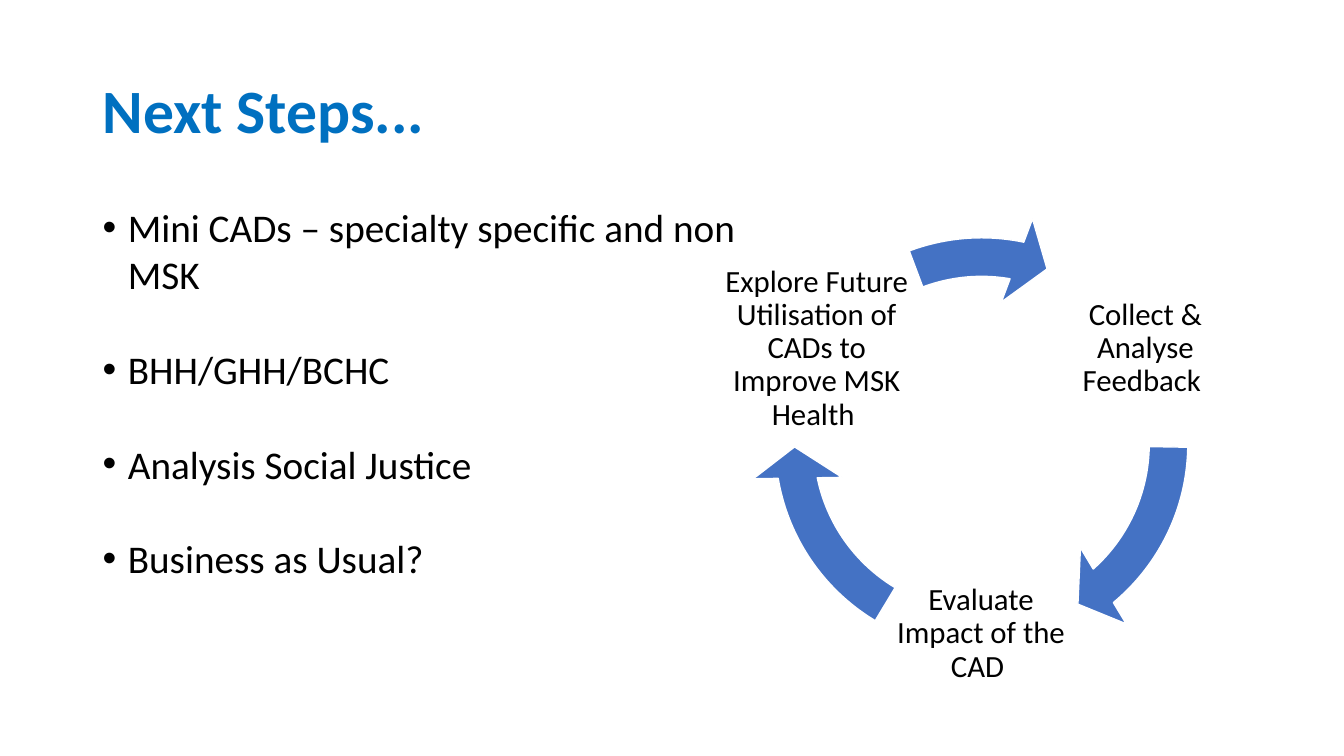
import dataclasses

import pptx
import pptx.dml.color
import pptx.enum.shapes
import pptx.enum.text
import pptx.util
from lxml import etree

Inches = pptx.util.Inches
Pt = pptx.util.Pt
PP_ALIGN = pptx.enum.text.PP_ALIGN
MSO_ANCHOR = pptx.enum.text.MSO_ANCHOR


@dataclasses.dataclass(frozen=True)
class Theme:
    font: str = "Calibri"
    heading: str = "0070C0"
    ink: str = "000000"
    arrow: str = "4472C4"
    outline: str = "FFFFFF"
    title_size: int = 44
    bullet_size: int = 28
    step_size: int = 22


theme = Theme()


def rgb(value):
    return pptx.dml.color.RGBColor.from_string(value)


def add_text(box, lines, frame_format, paragraph_format, size, color, bold=False, bullet=None):
    """Place a text box; return nothing, as all formatting is passed in."""
    frame = slide.shapes.add_textbox(*map(Inches, box)).text_frame
    frame.word_wrap = True
    for name, value in frame_format.items():
        setattr(frame, name, value)
    for index, line in enumerate(lines):
        paragraph = frame.paragraphs[0] if index == 0 else frame.add_paragraph()
        paragraph.text = line
        if bullet:
            properties = paragraph._p.get_or_add_pPr()
            properties.set("marL", str(Inches(0.25)))
            properties.set("indent", str(-Inches(0.25)))
            namespace = properties.nsmap["a"]
            etree.SubElement(properties, f"{{{namespace}}}buFont", typeface="Arial")
            etree.SubElement(properties, f"{{{namespace}}}buChar", char=bullet)
        for name, value in paragraph_format.items():
            if index > 0 or name != "space_before":
                setattr(paragraph, name, value)
        for run in paragraph.runs:
            run.font.name = theme.font
            run.font.size = Pt(size)
            run.font.bold = bold
            run.font.color.rgb = rgb(color)


presentation = pptx.Presentation()
presentation.slide_width = Inches(13.33)
presentation.slide_height = Inches(7.5)
slide = presentation.slides.add_slide(presentation.slide_layouts[6])

# Title
add_text((0.92, 0.4, 11.5, 1.45), ["Next Steps..."],
         {"vertical_anchor": MSO_ANCHOR.MIDDLE}, {"line_spacing": 0.9},
         theme.title_size, theme.heading, bold=True)

# Cycle: each step's text position, then its arrow's end and start angles
step_side = 1.94
step_margin = Inches(0.03)
step_frame = {
    "vertical_anchor": MSO_ANCHOR.MIDDLE,
    "margin_left": step_margin,
    "margin_top": step_margin,
    "margin_right": step_margin,
    "margin_bottom": step_margin,
}
step_paragraph = {"alignment": PP_ALIGN.CENTER, "line_spacing": 0.9}
cycle_steps = [
    ("Collect & Analyse Feedback ", 10.39, 2.49, 49.36, 0.89),
    ("Evaluate Impact of the CAD ", 8.76, 5.32, 169.5, 121.03),
    ("Explore Future Utilisation of CADs to Improve MSK Health ", 7.13, 2.49, 280.91, 249.48),
]
degree = 0.6  # adjustment units per degree
band_width, head_angle, head_width = 1 / 12, 9.61, 0.096

for step, left, top, end_angle, start_angle in cycle_steps:
    add_text((left, top, step_side, step_side), [step], step_frame, step_paragraph,
             theme.step_size, theme.ink)
    arrow = slide.shapes.add_shape(
        pptx.enum.shapes.MSO_SHAPE.CIRCULAR_ARROW,
        Inches(7.44), Inches(2.11), Inches(4.59), Inches(4.59))
    adjustments = (band_width, head_angle * degree, end_angle * degree,
                   start_angle * degree, head_width)
    for index, value in enumerate(adjustments):
        arrow.adjustments[index] = value
    arrow.shadow.inherit = False
    arrow.fill.solid()
    arrow.fill.fore_color.rgb = rgb(theme.arrow)
    arrow.line.color.rgb = rgb(theme.outline)
    arrow.line.width = Pt(1)

# Bullets
next_steps = [
    "Mini CADs – specialty specific and non MSK",
    "BHH/GHH/BCHC",
    "Analysis Social Justice",
    "Business as Usual?",
]
add_text((0.92, 1.97, 6.59, 3.87), next_steps,
         {"vertical_anchor": MSO_ANCHOR.TOP}, {"space_before": Pt(34)},
         theme.bullet_size, theme.ink, bullet="•")

presentation.save("out.pptx")
